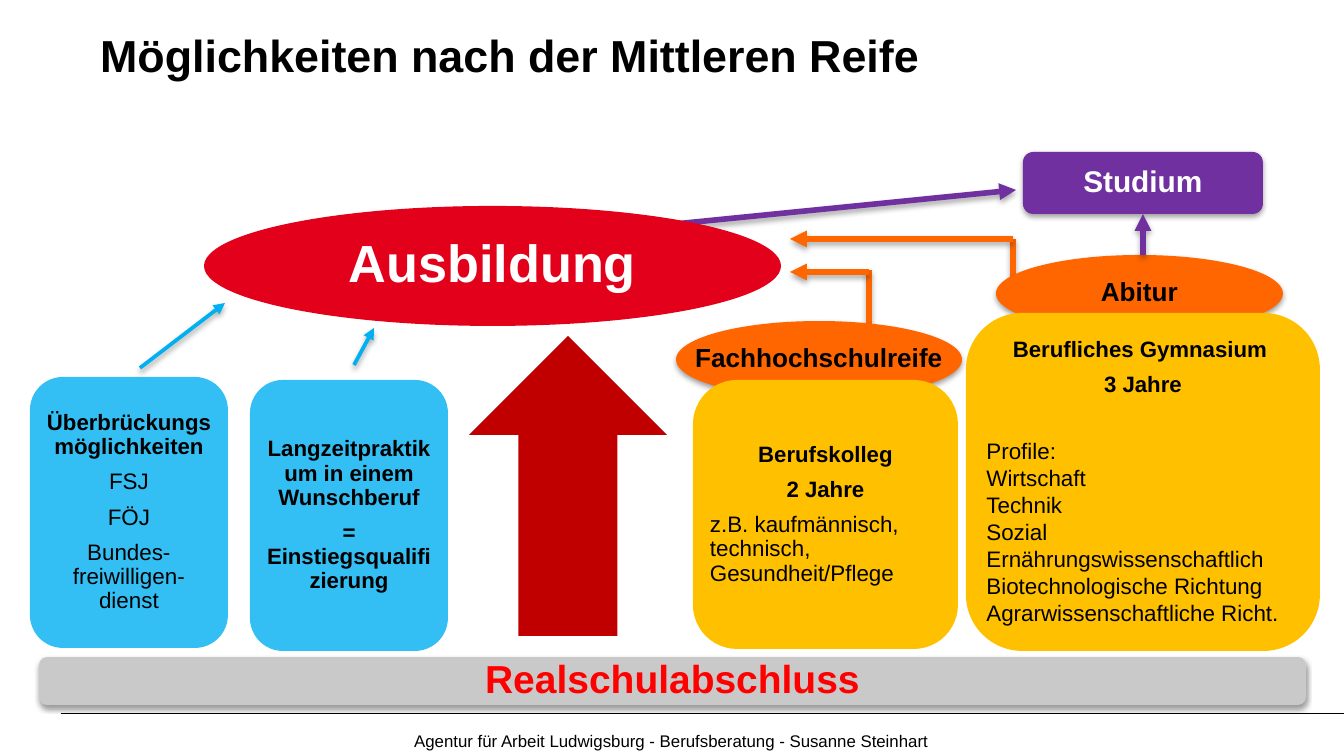
from dataclasses import dataclass
from lxml import etree
from pptx import Presentation
from pptx.dml.color import RGBColor
from pptx.enum.shapes import MSO_CONNECTOR, MSO_SHAPE
from pptx.enum.text import MSO_ANCHOR, PP_ALIGN
from pptx.oxml.ns import qn
from pptx.util import Pt

ELLIPSE, ROUNDED, UP_ARROW = MSO_SHAPE.OVAL, MSO_SHAPE.ROUNDED_RECTANGLE, MSO_SHAPE.UP_ARROW
STRAIGHT = MSO_CONNECTOR.STRAIGHT
LEFT, CENTER = PP_ALIGN.LEFT, PP_ALIGN.CENTER
MIDDLE, TOP = MSO_ANCHOR.MIDDLE, MSO_ANCHOR.TOP
BOTTOM_SITE = 2
SCALE = 914400 / 134.4
WIDTH, HEIGHT = 1344, 756


@dataclass(frozen=True)
class Theme:
    font: str = "Arial"
    black: str = "000000"
    white: str = "FFFFFF"
    red: str = "E2001A"
    dark_red: str = "C00000"
    bright_red: str = "FF0000"
    orange: str = "FF6600"
    yellow: str = "FFC000"
    purple: str = "7030A0"
    blue: str = "00B0F0"
    gray: str = "C9C9C9"
    title: float = 24
    hero: float = 28
    base: float = 20.9
    degree: float = 16
    label: float = 14
    heading: float = 11.9
    body: float = 12
    footer: float = 9


THEME = Theme()


def lines(texts, size, bold=False, color=THEME.black, align=CENTER, spacing=0.9, before=6):
    return [(text, size, bold, color, align, spacing, before) for text in texts]


def label(text, size, color=THEME.black):
    return lines([text], size, True, color)


def heading(*texts):
    return lines(texts, THEME.heading, True)


profiles = ["Wirtschaft", "Technik", "Sozial", "Ernährungswissenschaftlich",
            "Biotechnologische Richtung", "Agrarwissenschaftliche Richt."]

# key: (geometry, bounds, fill, opacity, shadow, inset, wrap, paragraphs)
SHAPES = {
    "Fachhochschulreife": (ELLIPSE, (676, 321, 286, 77), THEME.orange, 100, True, 0, False,
                           label("Fachhochschulreife", THEME.label)),
    "Abitur": (ELLIPSE, (996, 255, 287, 77), THEME.orange, 100, True, 0, False,
               label("Abitur", THEME.label)),
    "Ausbildung": (ELLIPSE, (204, 206, 577, 120), THEME.red, 100, False, 0, False,
                   label("Ausbildung", THEME.hero, THEME.white)),
    "Berufskolleg": (ROUNDED, (693, 380, 265, 269), THEME.yellow, 100, False, 4, True,
                     heading("Berufskolleg", "2 Jahre")
                     + lines(["z.B. kaufmännisch, technisch, Gesundheit/Pflege"],
                             THEME.body, align=LEFT)),
    "Studium": (ROUNDED, (1023, 152, 240, 62), THEME.purple, 100, True, 4, True,
                label("Studium", THEME.degree, THEME.white)),
    "Realschulabschluss": (ROUNDED, (39, 657, 1267, 48), THEME.gray, 100, True, 0, False,
                           label("Realschulabschluss", THEME.base, THEME.bright_red)),
    "Überbrückung": (ROUNDED, (30, 377, 198, 271), THEME.blue, 80, False, 4, True,
                     heading("Überbrückungsmöglichkeiten")
                     + lines(["FSJ", "FÖJ", "Bundes-\nfreiwilligen-\ndienst"], THEME.body)),
    "Aufstieg": (UP_ARROW, (469, 336, 198, 300), THEME.dark_red, 100, False, 0, False, []),
    "Langzeitpraktikum": (ROUNDED, (250, 380, 198, 271), THEME.blue, 80, False, 4, True,
                          heading("Langzeitpraktikum in einem Wunschberuf",
                                  "= Einstiegsqualifizierung")),
    "Gymnasium": (ROUNDED, (966, 313, 354, 338), THEME.yellow, 100, False, 4, True,
                  heading("Berufliches Gymnasium ", "3 Jahre")
                  + lines(["Profile:"], THEME.body, align=LEFT, spacing=1, before=21.5)
                  + lines(profiles, THEME.body, align=LEFT, spacing=1, before=0)),
}
BACK_LINES = [
    ((675, 224), (1016, 190), THEME.purple, 3, True),
    ((1013, 239), (1013, 283), THEME.orange, 3, False),
    ((869, 270), (869, 330), THEME.orange, 3, False),
]
FRONT_ARROWS = [
    ((354, 365), (374, 328), THEME.blue, 2),
    ((140, 368), (225, 303), THEME.blue, 2),
    ((869, 272), (790, 272), THEME.orange, 3),
    ((1013, 239), (790, 239), THEME.orange, 3),
]
STUDIUM_ARROW = ((1143, 255), (1143, 214), THEME.purple, 3)
TEXTS = [
    ((87, 21, 1210, 126), TOP,
     lines(["Möglichkeiten nach der Mittleren Reife"], THEME.title, True, align=LEFT, spacing=1)),
    ((401, 727, 828, 28), MIDDLE,
     lines(["Agentur für Arbeit Ludwigsburg - Berufsberatung - Susanne Steinhart"],
           THEME.footer, align=LEFT, spacing=1)),
]


def px(value):
    return round(value * SCALE)


def rgb(color):
    return RGBColor.from_string(color)


def add_effects(properties, shadow, opacity=38, distance=20000):
    effects = etree.SubElement(properties, qn("a:effectLst"))
    if shadow:
        outer = etree.SubElement(effects, qn("a:outerShdw"), blurRad="40000",
                                 dist=str(distance), dir="5400000", rotWithShape="0")
        color = etree.SubElement(outer, qn("a:srgbClr"), val=THEME.black)
        etree.SubElement(color, qn("a:alpha"), val=str(opacity * 1000))


def write(frame, paragraphs, anchor=MIDDLE, wrap=True):
    frame.word_wrap = wrap
    frame.vertical_anchor = anchor
    for index, (text, size, bold, color, align, spacing, before) in enumerate(paragraphs):
        paragraph = frame.add_paragraph() if index else frame.paragraphs[0]
        paragraph.text = text
        paragraph.alignment = align
        paragraph.line_spacing = spacing
        paragraph.space_before = Pt(before if index else 0)
        for run in paragraph.runs:
            run.font.name = THEME.font
            run.font.size = Pt(size)
            run.font.bold = bold
            run.font.color.rgb = rgb(color)
        for line_break in paragraph._p.findall(qn("a:br")):
            etree.SubElement(line_break, qn("a:rPr"), sz=str(round(size * 100)))


def add_shape(slide, geometry, bounds, fill, opacity, shadow, inset, wrap, paragraphs):
    shape = slide.shapes.add_shape(geometry, *map(px, bounds))
    shape.fill.solid()
    shape.fill.fore_color.rgb = rgb(fill)
    shape.line.fill.background()
    if opacity < 100:
        color = shape._element.spPr.find(qn("a:solidFill"))[0]
        etree.SubElement(color, qn("a:alpha"), val=str(opacity * 1000))
    add_effects(shape._element.spPr, shadow)
    frame = shape.text_frame
    frame.margin_left = frame.margin_right = frame.margin_top = frame.margin_bottom = px(inset)
    write(frame, paragraphs, wrap=wrap)
    return shape


def add_line(slide, start, end, color, width, arrow=True, shadow=True):
    connector = slide.shapes.add_connector(STRAIGHT, *map(px, start + end))
    connector.line.color.rgb = rgb(color)
    connector.line.width = Pt(width)
    properties = connector._element.spPr
    if arrow:
        etree.SubElement(properties.find(qn("a:ln")), qn("a:tailEnd"), type="triangle")
    add_effects(properties, shadow, 35, 23000)
    return connector


def main():
    presentation = Presentation()
    presentation.slide_width, presentation.slide_height = px(WIDTH), px(HEIGHT)
    slide = presentation.slides.add_slide(presentation.slide_layouts[6])
    add_line(slide, (61, 714), (WIDTH, 714), THEME.black, 0.5, arrow=False, shadow=False)
    for line in BACK_LINES:
        add_line(slide, *line)
    shapes = {key: add_shape(slide, *settings) for key, settings in SHAPES.items()}
    for arrow in FRONT_ARROWS:
        add_line(slide, *arrow)
    add_line(slide, *STUDIUM_ARROW).end_connect(shapes["Studium"], BOTTOM_SITE)
    for bounds, anchor, paragraphs in TEXTS:
        box = slide.shapes.add_textbox(*map(px, bounds))
        write(box.text_frame, paragraphs, anchor)
    presentation.save("out.pptx")


if __name__ == "__main__":
    main()
